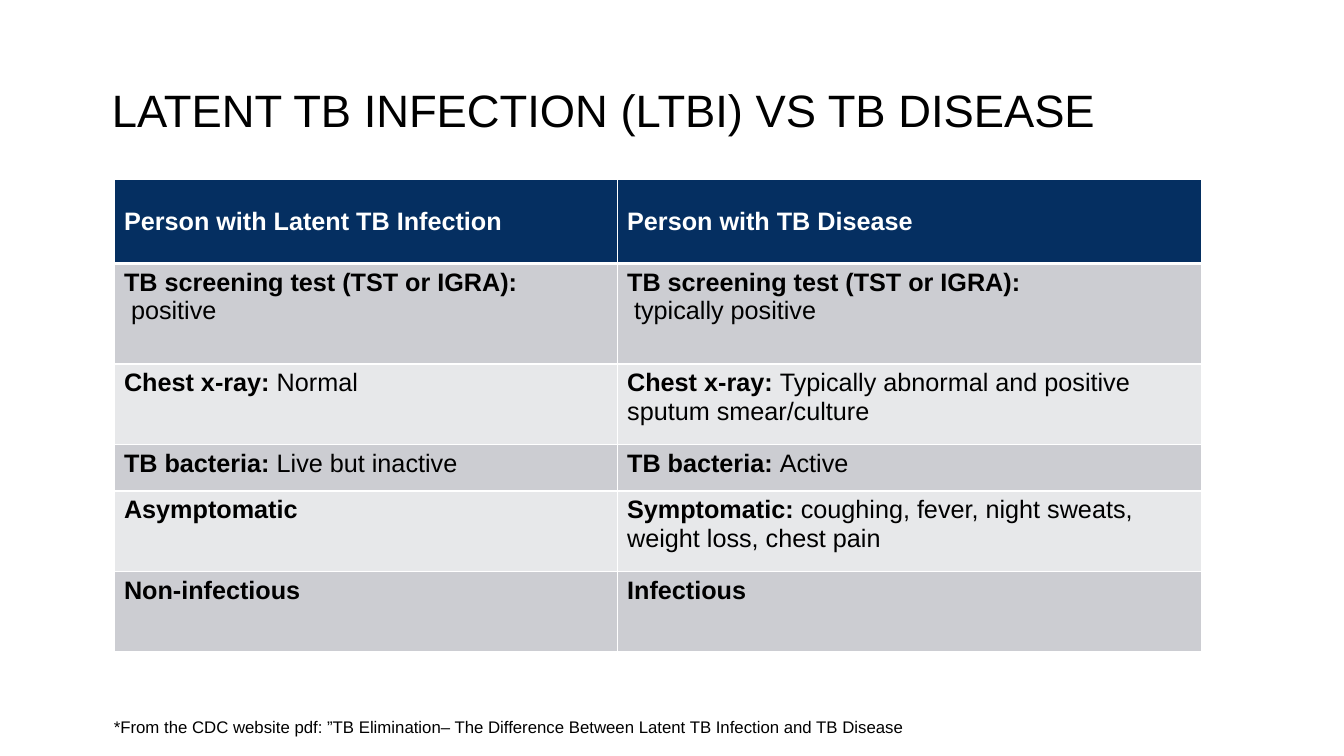
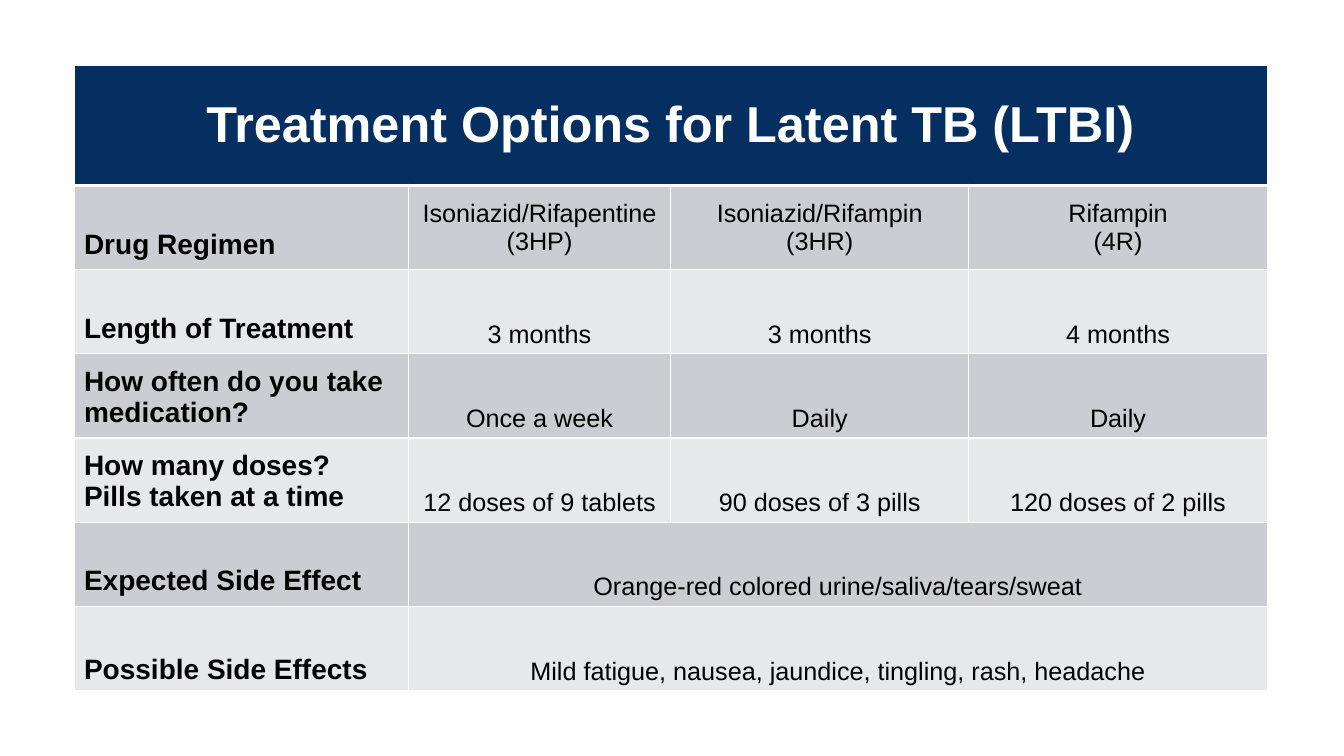
from lxml import etree
from pptx import Presentation
from pptx.dml.color import RGBColor
from pptx.enum import text as t
from pptx.oxml import ns
from pptx.util import Pt

COLORS = {"navy": "052F61", "dark_band": "CCCDD2", "light_band": "E7E8EA",
          "white": "FFFFFF", "ink": "000000"}
FONT = "Arial"
TOP, MIDDLE, BOTTOM = (t.MSO_ANCHOR.TOP, t.MSO_ANCHOR.MIDDLE,
                       t.MSO_ANCHOR.BOTTOM)
LEFT, CENTER = t.PP_ALIGN.LEFT, t.PP_ALIGN.CENTER


def rgb(name):
    return RGBColor.from_string(COLORS[name])


def write(frame, *lines, size=18, color="ink", align=LEFT, indent=0):
    """Write one paragraph per line; a line is a list of (text, bold) runs.

    The indent applies to every paragraph after the first.
    """
    for number, line in enumerate(lines):
        paragraph = frame.add_paragraph() if number else frame.paragraphs[0]
        paragraph.alignment = align
        if number and indent:
            paragraph._p.get_or_add_pPr().set("marL", str(Pt(indent)))
        for words, bold in line:
            run = paragraph.add_run()
            run.text = words
            run.font.name, run.font.size, run.font.bold = FONT, Pt(size), bold
            run.font.color.rgb = rgb(color)


def border(cell, **widths):
    """Draw white cell borders; keys are the sides L, R, T, B."""
    props = cell._tc.get_or_add_tcPr()
    for position, (side, width) in enumerate(widths.items()):
        line = etree.Element(ns.qn("a:ln" + side), w=str(Pt(width)))
        fill = etree.SubElement(line, ns.qn("a:solidFill"))
        etree.SubElement(fill, ns.qn("a:srgbClr"), val=COLORS["white"])
        props.insert(position, line)


def banded_table(slide, left, top, widths, heights):
    """Add an empty table: navy heading row, then alternating grey bands."""
    table = slide.shapes.add_table(
        len(heights), len(widths), Pt(left), Pt(top),
        Pt(sum(widths)), Pt(sum(heights))).table
    for column, width in zip(table.columns, widths):
        column.width = Pt(width)
    for number, (row, height) in enumerate(zip(table.rows, heights)):
        row.height = Pt(height)
        band = "dark_band" if number % 2 else "light_band"
        for cell in row.cells:
            cell.fill.solid()
            cell.fill.fore_color.rgb = rgb(band if number else "navy")
            border(cell, L=1, R=1, T=3 if number == 1 else 1,
                   B=1 if number else 3)
    return table


# Latent infection compared with disease
def comparison_slide(deck):
    slide = deck.slides.add_slide(deck.slide_layouts[5])

    # Title
    title = slide.shapes.title
    title.left, title.top = Pt(72.7), Pt(38.2)
    title.width, title.height = Pt(740), Pt(79.2)
    title.text_frame.vertical_anchor = MIDDLE
    write(title.text_frame,
          [("LATENT TB INFECTION (LTBI) VS TB DISEASE", False)], size=32.4)

    # Comparison table
    test = ("TB screening test (TST or IGRA):", True)
    xray, bacteria = ("Chest x-ray: ", True), ("TB bacteria: ", True)
    findings = [
        ([[test], [("positive", False)]],
         [[test], [("typically positive", False)]]),
        ([[xray, ("Normal", False)]],
         [[xray, ("Typically abnormal and positive sputum smear/culture",
                  False)]]),
        ([[bacteria, ("Live but inactive", False)]],
         [[bacteria, ("Active", False)]]),
        ([[("Asymptomatic", True)]],
         [[("Symptomatic: ", True),
           ("coughing, fever, night sweats, weight loss, chest pain",
            False)]]),
        ([[("Non-infectious", True)]], [[("Infectious", True)]]),
    ]
    table = banded_table(slide, 81.4, 128.4, [359.4, 417.4],
                         [59.8, 71.8, 57.4, 33.4, 57.4, 57.4])
    for column, heading in enumerate(["Person with Latent TB Infection",
                                      "Person with TB Disease"]):
        cell = table.cell(0, column)
        cell.vertical_anchor = MIDDLE
        write(cell.text_frame, [(heading, True)], color="white")
    for row, pair in enumerate(findings, 1):
        for column, lines in enumerate(pair):
            cell = table.cell(row, column)
            cell.vertical_anchor = TOP
            write(cell.text_frame, *lines, indent=5)

    # Source note
    note = slide.shapes.add_textbox(Pt(74.2), Pt(508.3), Pt(791), Pt(21.6))
    note.text_frame.word_wrap = True
    write(note.text_frame,
          [("*From the CDC website pdf: ”TB Elimination– The Difference "
            "Between Latent TB Infection and TB Disease", False)], size=12)


# Treatment options
def treatment_slide(deck):
    slide = deck.slides.add_slide(deck.slide_layouts[6])
    questions = [
        (["Drug Regimen"], [["Isoniazid/Rifapentine", "(3HP)"],
                            ["Isoniazid/Rifampin", "(3HR)"],
                            ["Rifampin", "(4R)"]]),
        (["Length of Treatment"], [["3 months"], ["3 months"], ["4 months"]]),
        (["How often do you take medication?"],
         [["Once a week"], ["Daily"], ["Daily"]]),
        (["How many doses?", "Pills taken at a time"],
         [["12 doses of 9 tablets"], ["90 doses of 3 pills"],
          ["120 doses of 2 pills"]]),
        (["Expected Side Effect"],
         [["Orange-red colored urine/saliva/tears/sweat"]]),
        (["Possible Side Effects"],
         [["Mild fatigue, nausea, jaundice, tingling, rash, headache"]]),
    ]
    table = banded_table(slide, 52.8, 46.4, [239, 187.2, 213.1, 213.1],
                         [86.2] + [60.1] * len(questions))

    # Heading across all columns
    heading = table.cell(0, 0)
    heading.merge(table.cell(0, 3))
    heading.vertical_anchor = MIDDLE
    write(heading.text_frame,
          [("Treatment Options for Latent TB (LTBI)", True)],
          size=36, color="white", align=CENTER)

    # Questions on the left, one answer per regimen or one for all
    for row, (question, answers) in enumerate(questions, 1):
        label = table.cell(row, 0)
        label.vertical_anchor = BOTTOM
        label.margin_bottom = Pt(7 if row < len(questions) else 3.6)
        write(label.text_frame, *[[(line, True)] for line in question],
              size=20)
        if len(answers) == 1:
            table.cell(row, 1).merge(table.cell(row, 3))
        for column, answer in enumerate(answers, 1):
            cell = table.cell(row, column)
            cell.vertical_anchor = MIDDLE if row == 1 else BOTTOM
            write(cell.text_frame, *[[(line, False)] for line in answer],
                  align=CENTER)


def main():
    deck = Presentation()
    deck.slide_width, deck.slide_height = Pt(960), Pt(540)
    comparison_slide(deck)
    treatment_slide(deck)
    deck.save("out.pptx")


if __name__ == "__main__":
    main()
